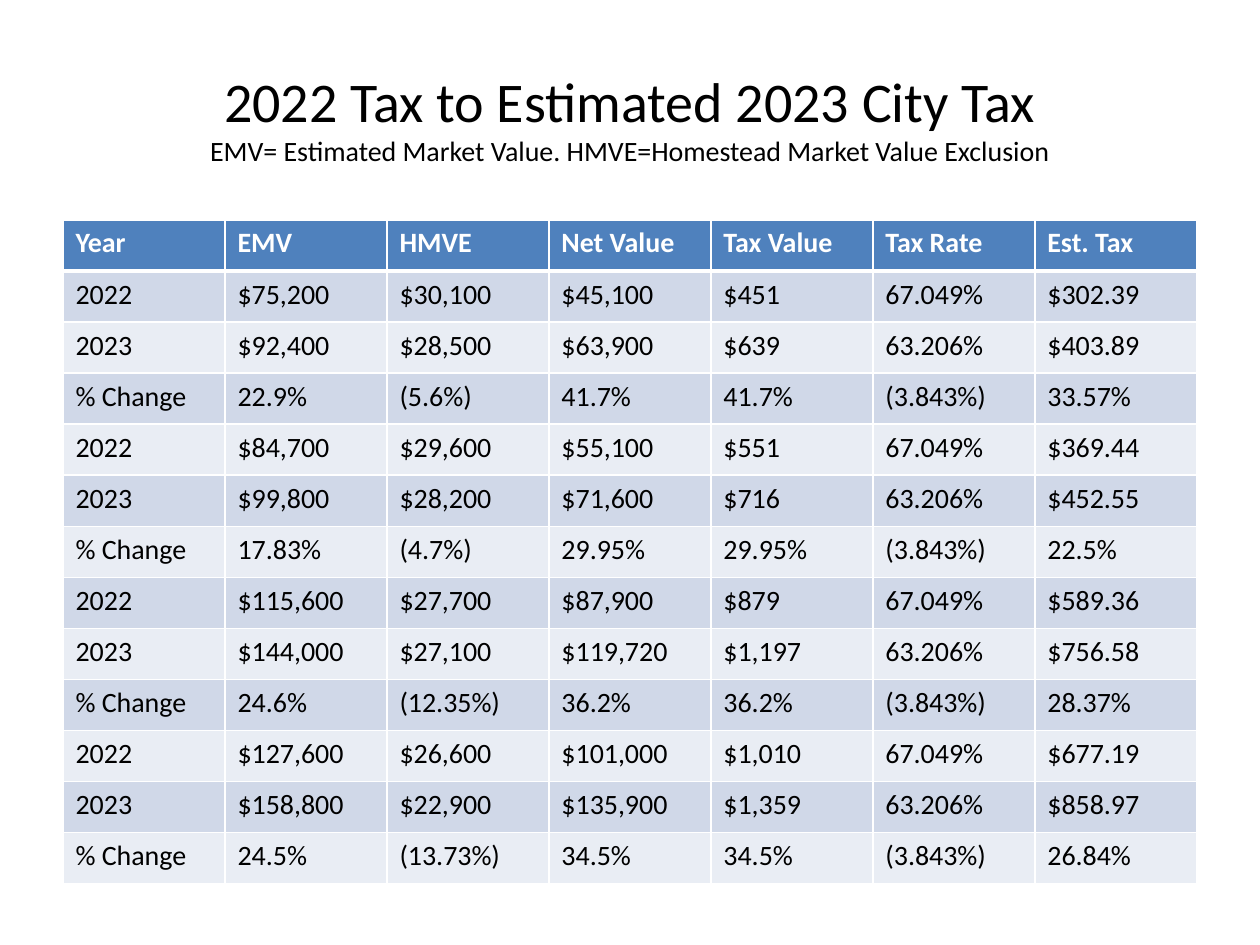
from lxml.etree import SubElement
from pptx import Presentation
from pptx.dml.color import RGBColor
from pptx.enum.text import MSO_ANCHOR, PP_ALIGN
from pptx.oxml.ns import qn
from pptx.util import Pt

HUES = {"ink": "000000", "white": "FFFFFF", "head": "4F81BD",
        "dark": "D0D8E8", "light": "E9EDF4"}
SCALE = 914400 / 126

HEADS = ["Year", "EMV", "HMVE", "Net Value", "Tax Value", "Tax Rate", "Est. Tax"]
YEARS = ["2022", "2023", "% Change"]
RATES = ["67.049%", "63.206%", "(3.843%)"]
# EMV, HMVE, net value, tax value, estimated tax; three rows per home
HOMES = [
    ["$75,200", "$30,100", "$45,100", "$451", "$302.39"],
    ["$92,400", "$28,500", "$63,900", "$639", "$403.89"],
    ["22.9%", "(5.6%)", "41.7%", "41.7%", "33.57%"],
    ["$84,700", "$29,600", "$55,100", "$551", "$369.44"],
    ["$99,800", "$28,200", "$71,600", "$716", "$452.55"],
    ["17.83%", "(4.7%)", "29.95%", "29.95%", "22.5%"],
    ["$115,600", "$27,700", "$87,900", "$879", "$589.36"],
    ["$144,000", "$27,100", "$119,720", "$1,197", "$756.58"],
    ["24.6%", "(12.35%)", "36.2%", "36.2%", "28.37%"],
    ["$127,600", "$26,600", "$101,000", "$1,010", "$677.19"],
    ["$158,800", "$22,900", "$135,900", "$1,359", "$858.97"],
    ["24.5%", "(13.73%)", "34.5%", "34.5%", "26.84%"],
]


def px(n):
    return round(n * SCALE)


def rgb(name):
    return RGBColor.from_string(HUES[name])


class Deck:
    def __init__(self, font):
        self.font = font
        self.prs = Presentation()
        self.prs.slide_width, self.prs.slide_height = px(1260), px(945)
        self.slide = self.prs.slides.add_slide(self.prs.slide_layouts[5])

    def run(self, para, text, size, hue="ink", bold=False):
        run = para.add_run()
        run.text = text
        font = run.font
        font.name, font.size, font.bold = self.font, Pt(size), bold
        font.color.rgb = rgb(hue)

    def title(self, box, lines):
        shape = self.slide.shapes.title
        shape.left, shape.top, shape.width, shape.height = map(px, box)
        frame = shape.text_frame
        frame.vertical_anchor = MSO_ANCHOR.MIDDLE
        para = frame.paragraphs[0]
        para.alignment = PP_ALIGN.CENTER
        for i, (text, size) in enumerate(lines):
            if i:
                # The break takes the size of the line it ends
                para.add_line_break()
                mark = SubElement(para._p[-1], qn("a:rPr"))
                mark.set("sz", str(lines[i - 1][1] * 100))
            self.run(para, text, size)

    def edge(self, cell, side, width):
        line = SubElement(cell._tc.get_or_add_tcPr(), qn("a:ln" + side))
        line.set("w", str(Pt(width)))
        fill = SubElement(line, qn("a:solidFill"))
        SubElement(fill, qn("a:srgbClr")).set("val", HUES["white"])

    def table(self, box, rows, size):
        table = self.slide.shapes.add_table(
            len(rows), len(rows[0]), *map(px, box)).table
        table.horz_banding = False
        for r, row in enumerate(rows):
            hue = "head" if r == 0 else ("light", "dark")[r % 2]
            for c, text in enumerate(row):
                cell = table.cell(r, c)
                # A thick rule parts the header from the body
                for side in "LRTB":
                    thick = (r, side) in [(0, "B"), (1, "T")]
                    self.edge(cell, side, 3 if thick else 1)
                cell.fill.solid()
                cell.fill.fore_color.rgb = rgb(hue)
                self.run(cell.text_frame.paragraphs[0], text, size,
                         "ink" if r else "white", r == 0)


def main():
    deck = Deck("Calibri")
    # Heading
    deck.title((63, 38, 1134, 157), [
        ("2022 Tax to Estimated 2023 City Tax", 32),
        ("EMV= Estimated Market Value. HMVE=Homestead Market Value Exclusion", 16)])
    # Tax table
    body = [[YEARS[i % 3], *home[:4], RATES[i % 3], home[4]]
            for i, home in enumerate(HOMES)]
    deck.table((63, 220, 1134, 664), [HEADS, *body], 16)
    deck.prs.save("out.pptx")


if __name__ == "__main__":
    main()
